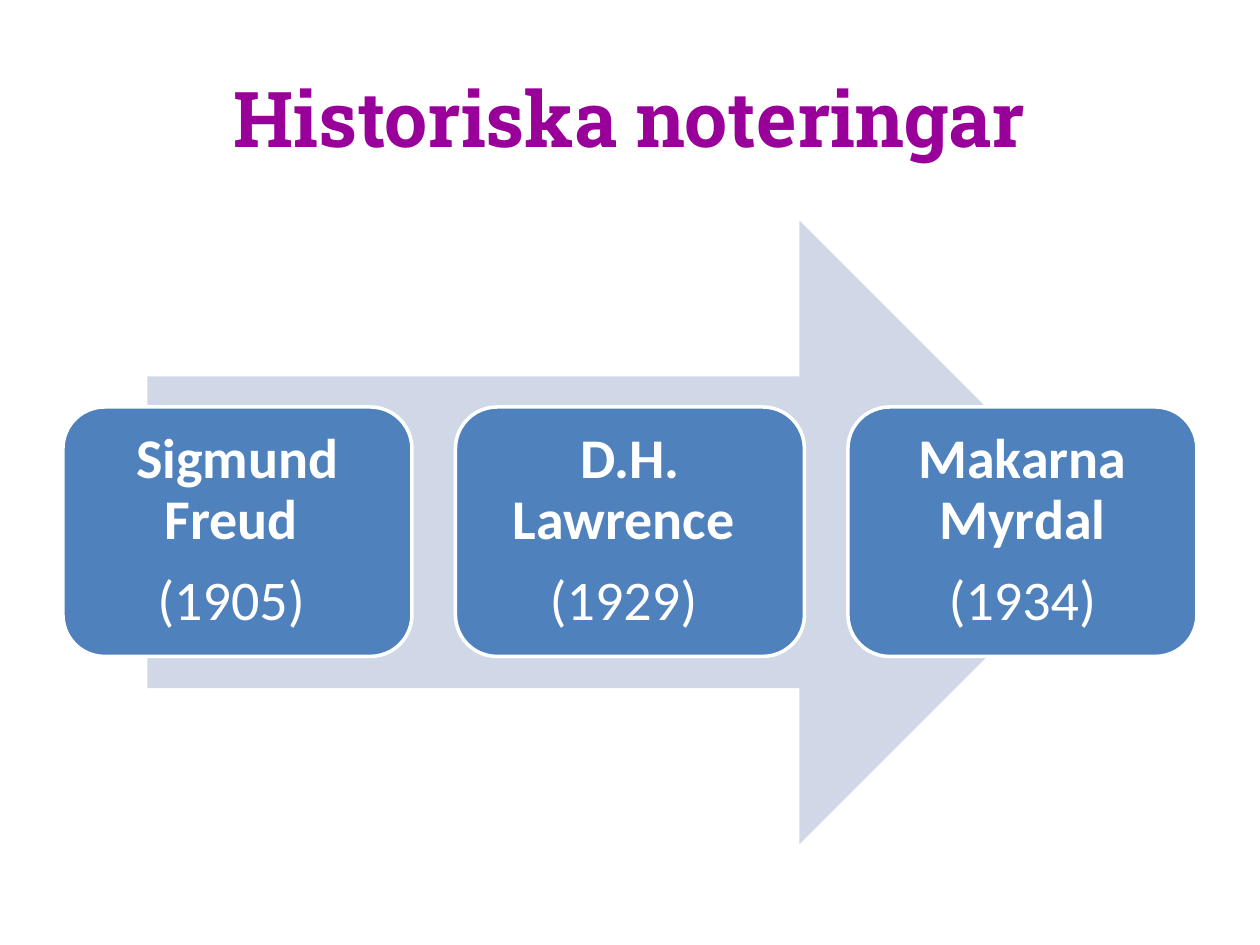
from pptx import Presentation
from pptx.dml.color import RGBColor
from pptx.enum.shapes import MSO_SHAPE
from pptx.enum.text import MSO_ANCHOR, PP_ALIGN
from pptx.util import Inches, Pt

# Trailing spaces shift the centred lines slightly to the left.
PEOPLE = [
    ("Sigmund Freud ", "(1905) "),
    ("D.H. Lawrence ", "(1929) "),
    ("Makarna Myrdal", "(1934)"),
]
CARD_LEFT, CARD_TOP, CARD_W, CARD_H = 0.5, 3.23, 2.77, 1.98
CARD_STEP = 3.115


def rgb(value):
    return RGBColor.from_string(value)


def style_paragraph(p, font, size, color, bold):
    p.alignment = PP_ALIGN.CENTER
    for r in p.runs:
        r.font.name = font
        r.font.size = Pt(size)
        r.font.bold = bold
        r.font.color.rgb = rgb(color)


def add_title(s, text):
    box = s.shapes.add_textbox(Inches(0.5), Inches(0.3), Inches(9), Inches(1.25))
    tf = box.text_frame
    tf.word_wrap = True
    tf.vertical_anchor = MSO_ANCHOR.MIDDLE
    tf.text = text
    style_paragraph(tf.paragraphs[0], "Roboto Slab", 44, "990099", True)


def add_filled_shape(s, kind, left, top, width, height, fill):
    sp = s.shapes.add_shape(kind, Inches(left), Inches(top), Inches(width), Inches(height))
    sp.shadow.inherit = False
    sp.fill.solid()
    sp.fill.fore_color.rgb = rgb(fill)
    sp.line.fill.background()
    return sp


def add_card(s, left, name, year):
    sp = add_filled_shape(s, MSO_SHAPE.ROUNDED_RECTANGLE,
                          left, CARD_TOP, CARD_W, CARD_H, "4F81BD")
    sp.line.color.rgb = rgb("FFFFFF")
    sp.line.width = Pt(2)
    tf = sp.text_frame
    tf.word_wrap = True
    tf.vertical_anchor = MSO_ANCHOR.MIDDLE
    tf.margin_left = tf.margin_right = Inches(0.13)
    tf.margin_top = tf.margin_bottom = Inches(0.13)
    tf.text = f"{name}\n{year}"
    for p, bold in zip(tf.paragraphs, (True, False)):
        style_paragraph(p, "Calibri", 32, "FFFFFF", bold)
        p.line_spacing = 0.9
    tf.paragraphs[0].space_after = Pt(12)


def main():
    prs = Presentation()
    prs.slide_width, prs.slide_height = Inches(10), Inches(7.5)
    s = prs.slides.add_slide(prs.slide_layouts[6])
    add_title(s, "Historiska noteringar")
    add_filled_shape(s, MSO_SHAPE.RIGHT_ARROW, 1.17, 1.75, 7.65, 4.95, "D0D8E8")
    for i, (name, year) in enumerate(PEOPLE):
        add_card(s, CARD_LEFT + i * CARD_STEP, name, year)
    prs.save("out.pptx")


if __name__ == "__main__":
    main()
